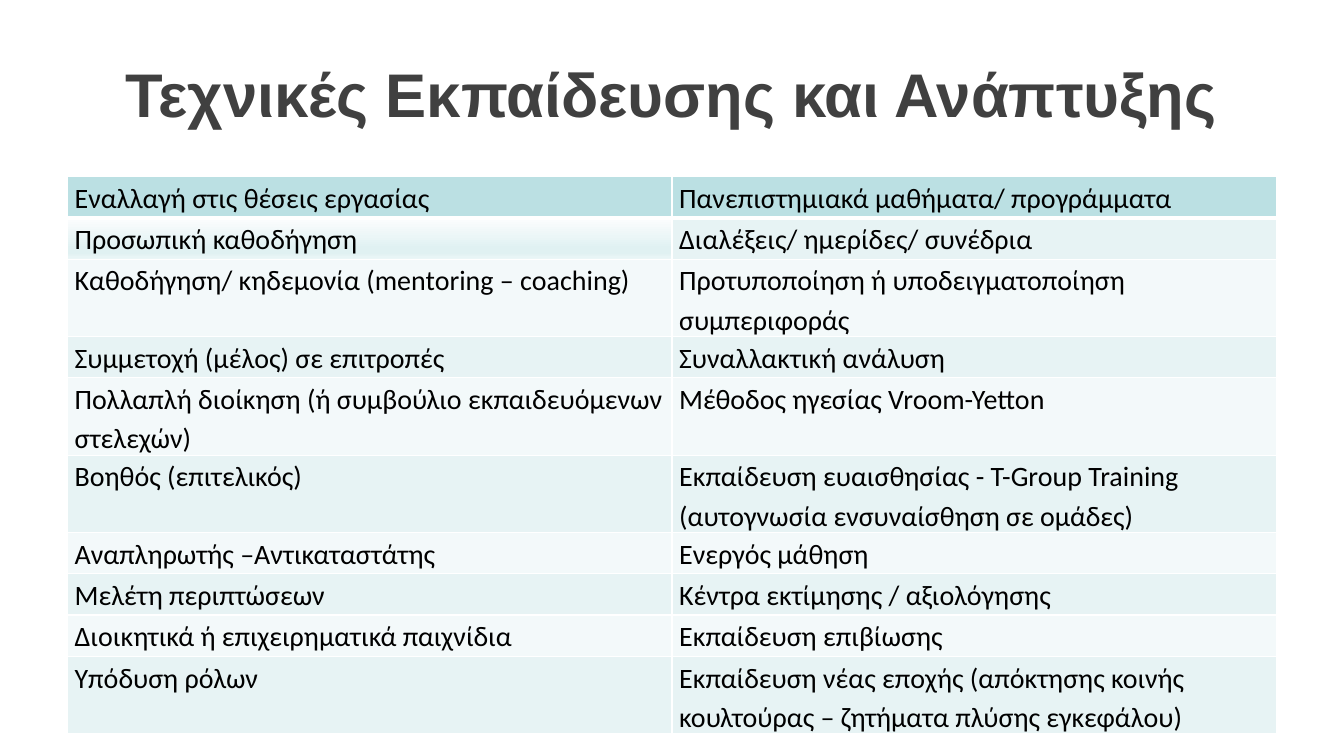
from pptx import Presentation
from pptx.dml.color import RGBColor
from pptx.enum.text import MSO_ANCHOR, PP_ALIGN
from pptx.oxml import parse_xml
from pptx.oxml.ns import nsdecls
from pptx.util import Cm, Pt

CENTER = PP_ALIGN.CENTER
MIDDLE = MSO_ANCHOR.MIDDLE

DARK_GREY = RGBColor(0x40, 0x40, 0x40)
BLACK = RGBColor(0x00, 0x00, 0x00)
WHITE = RGBColor(0xFF, 0xFF, 0xFF)
HEADER_TEAL = RGBColor(0xBB, 0xE0, 0xE3)
BAND_DARK = RGBColor(0xE7, 0xF3, 0xF4)
BAND_LIGHT = RGBColor(0xF3, 0xF9, 0xFA)
# Gradient of the highlighted cell: position in percent, colour
HIGHLIGHT = [
    (0, RGBColor(0xFC, 0xFD, 0xFE)),
    (74, RGBColor(0xE0, 0xF1, 0xF2)),
    (83, RGBColor(0xE0, 0xF1, 0xF2)),
    (100, RGBColor(0xEB, 0xF6, 0xF7)),
]

TITLE = "Τεχνικές Εκπαίδευσης και Ανάπτυξης"
TECHNIQUES = [
    ("Εναλλαγή στις θέσεις εργασίας", "Πανεπιστημιακά μαθήματα/ προγράμματα"),
    ("Προσωπική καθοδήγηση", "Διαλέξεις/ ημερίδες/ συνέδρια"),
    ("Καθοδήγηση/ κηδεμονία (mentoring – coaching)",
     "Προτυποποίηση ή υποδειγματοποίηση συμπεριφοράς"),
    ("Συμμετοχή (μέλος) σε επιτροπές", "Συναλλακτική ανάλυση"),
    ("Πολλαπλή διοίκηση (ή συμβούλιο εκπαιδευόμενων στελεχών)",
     "Μέθοδος ηγεσίας Vroom-Yetton"),
    ("Βοηθός (επιτελικός)",
     "Εκπαίδευση ευαισθησίας - T-Group Training (αυτογνωσία ενσυναίσθηση σε ομάδες)"),
    ("Αναπληρωτής –Αντικαταστάτης", "Ενεργός μάθηση"),
    ("Μελέτη περιπτώσεων", "Κέντρα εκτίμησης / αξιολόγησης"),
    ("Διοικητικά ή επιχειρηματικά παιχνίδια", "Εκπαίδευση επιβίωσης"),
    ("Υπόδυση ρόλων",
     "Εκπαίδευση νέας εποχής (απόκτησης κοινής κουλτούρας – ζητήματα πλύσης εγκεφάλου)"),
]


def add_run(p, text, font, size, color, bold=False):
    r = p.add_run()
    r.text = text
    r.font.name = font
    r.font.size = Pt(size)
    r.font.bold = bold
    r.font.color.rgb = color


def set_borders(cell, bottom):
    tcPr = cell._tc.get_or_add_tcPr()
    for side, width in (("L", 1), ("R", 1), ("T", 1), ("B", bottom)):
        tcPr.append(parse_xml(
            f'<a:ln{side} {nsdecls("a")} w="{Pt(width)}"><a:solidFill>'
            f'<a:srgbClr val="{WHITE}"/></a:solidFill></a:ln{side}>'))


def set_gradient(cell, stops):
    gs = "".join(f'<a:gs pos="{pos * 1000}"><a:srgbClr val="{color}"/></a:gs>'
                 for pos, color in stops)
    cell._tc.get_or_add_tcPr().append(parse_xml(
        f'<a:gradFill {nsdecls("a")} rotWithShape="1"><a:gsLst>{gs}</a:gsLst>'
        '<a:lin ang="5400000" scaled="0"/></a:gradFill>'))


def fill_cell(cell, row, col):
    if (row, col) == (1, 0):
        set_gradient(cell, HIGHLIGHT)
        return
    cell.fill.solid()
    if row == 0:
        cell.fill.fore_color.rgb = HEADER_TEAL
    else:
        cell.fill.fore_color.rgb = BAND_DARK if row % 2 else BAND_LIGHT


def add_title(s, left, top, width, height):
    tf = s.shapes.add_textbox(left, top, width, height).text_frame
    tf.word_wrap = True
    tf.vertical_anchor = MIDDLE
    p = tf.paragraphs[0]
    p.alignment = CENTER
    add_run(p, TITLE, "Arial", 44, DARK_GREY, bold=True)


def add_techniques(s, left, top, width, height):
    rows, cols = len(TECHNIQUES), len(TECHNIQUES[0])
    table = s.shapes.add_table(rows, cols, left, top, width, height).table
    for i, texts in enumerate(TECHNIQUES):
        for j, text in enumerate(texts):
            cell = table.cell(i, j)
            cell.margin_left = cell.margin_right = Cm(0.18)
            cell.margin_top = cell.margin_bottom = Cm(0)
            set_borders(cell, bottom=3 if i == 0 else 1)
            fill_cell(cell, i, j)
            p = cell.text_frame.paragraphs[0]
            p.line_spacing = 1.15
            add_run(p, text, "Calibri", 20, BLACK)


def main():
    prs = Presentation()
    prs.slide_width, prs.slide_height = Cm(33.87), Cm(19.05)
    s = prs.slides.add_slide(prs.slide_layouts[6])

    # Title above, table of techniques below, on the same margins
    margin = Cm(1.7)
    width = prs.slide_width - 2 * margin
    add_title(s, margin, Cm(0.76), width, Cm(3.18))
    add_techniques(s, margin, Cm(4.45), width, Cm(10.4))

    prs.save("out.pptx")


if __name__ == "__main__":
    main()
